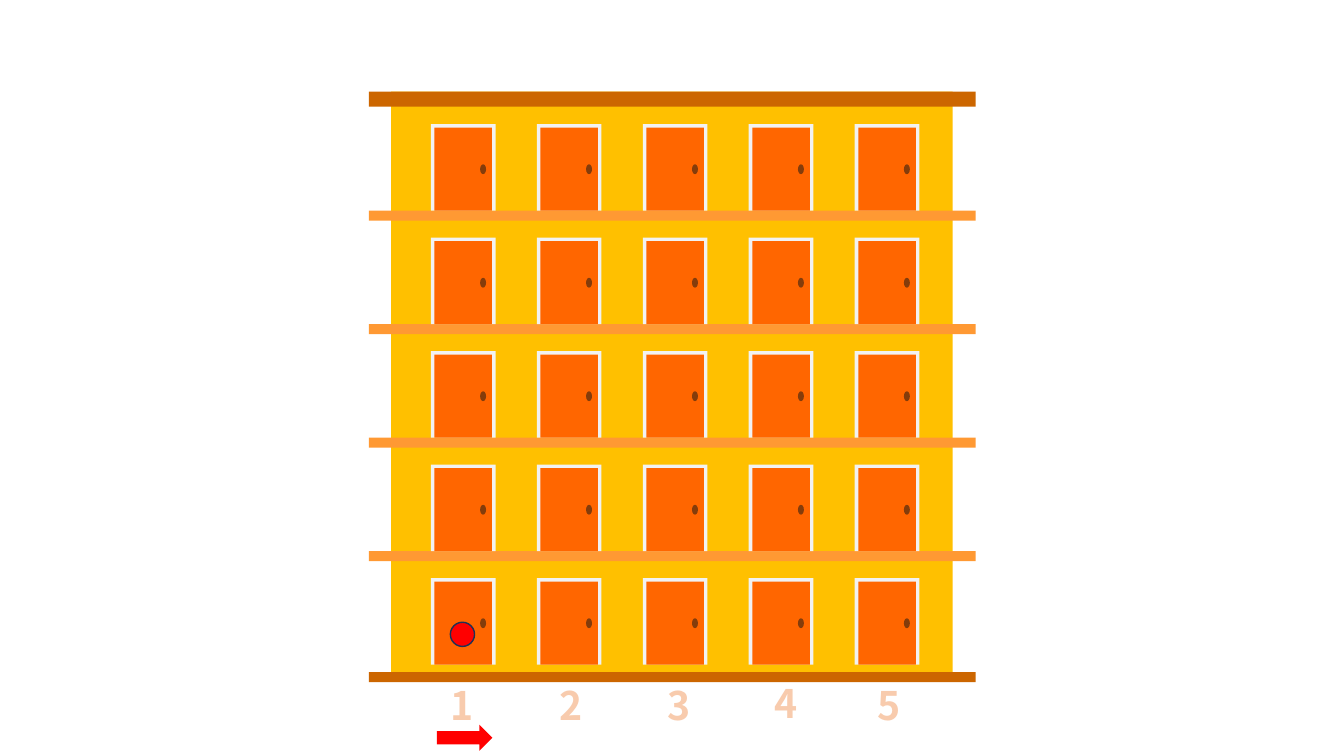
from lxml.etree import SubElement
from pptx import Presentation
from pptx.dml.color import RGBColor
from pptx.enum.shapes import MSO_SHAPE
from pptx.enum.text import MSO_AUTO_SIZE, PP_ALIGN
from pptx.oxml.ns import qn
from pptx.util import Cm, Pt

COLORS = {
    "wall": "FFC000",
    "roof": "CC6600",
    "ledge": "FF9933",
    "frame": "F2F2F2",
    "door": "FF6600",
    "knob": "843C0B",
    "marker": "FF0000",
    "marker_line": "1E3256",
    "number": "F8CBAD",
    "number_line": "ED7D31",
}
FONT = "Noto Sans CJK SC"
NUMBERS = [
    ("1", 11.1, 17.04),
    ("2", 13.84, 17.04),
    ("3", 16.56, 17.04),
    ("4", 19.28, 16.99),
    ("5", 21.87, 17.04),
]
FLOORS, DOORS_PER_FLOOR = 5, 5
DOOR_LEFT, DOOR_TOP = 10.86, 3.13
DOOR_PITCH, FLOOR_PITCH = 2.67, 2.86
LEDGE_LEFT, LEDGE_TOP, LEDGE_WIDTH, LEDGE_HEIGHT = 9.3, 5.31, 15.29, 0.25
WALL = (9.86, 2.31, 14.15, 14.63)
ROOF = (LEDGE_LEFT, 2.31, LEDGE_WIDTH, 0.38)
BASE = (LEDGE_LEFT, 16.94, LEDGE_WIDTH, LEDGE_HEIGHT)
DOOR_PARTS = [
    (MSO_SHAPE.RECTANGLE, (0, 0, 1.63, 2.18), "frame"),
    (MSO_SHAPE.RECTANGLE, (0.09, 0.09, 1.45, 2.09), "door"),
    (MSO_SHAPE.OVAL, (1.24, 1.01, 0.15, 0.25), "knob"),
]
ARROW = (11.01, 18.26, 1.4, 0.66)
BALL = (11.35, 15.68, 0.61, 0.61)


def add_filled(shapes, kind, box, color):
    shape = shapes.add_shape(kind, *map(Cm, box))
    shape.shadow.inherit = False
    shape.fill.solid()
    shape.fill.fore_color.rgb = RGBColor.from_string(COLORS[color])
    shape.line.fill.background()
    return shape


def add_door(slide, left, top):
    group = slide.shapes.add_group_shape()
    for kind, (dx, dy, width, height), color in DOOR_PARTS:
        add_filled(group.shapes, kind, (left + dx, top + dy, width, height), color)


def add_number(slide, text, left, top):
    box = slide.shapes.add_textbox(Cm(left), Cm(top), Cm(1.07), Cm(1.45))
    text_frame = box.text_frame
    text_frame.text = text
    text_frame.word_wrap = False
    text_frame.auto_size = MSO_AUTO_SIZE.SHAPE_TO_FIT_TEXT
    paragraph = text_frame.paragraphs[0]
    paragraph.alignment = PP_ALIGN.CENTER
    font = paragraph.runs[0].font
    font.name = FONT
    font.size = Pt(28)
    font.bold = True
    font.color.rgb = RGBColor.from_string(COLORS["number"])
    properties = paragraph.runs[0].font._element
    outline = SubElement(properties, qn("a:ln"), w=str(Pt(1.75)))
    fill = SubElement(outline, qn("a:solidFill"))
    SubElement(fill, qn("a:srgbClr"), val=COLORS["number_line"])
    properties.insert(0, outline)


def main():
    presentation = Presentation()
    presentation.slide_width = Cm(33.87)
    presentation.slide_height = Cm(19.05)
    slide = presentation.slides.add_slide(presentation.slide_layouts[6])

    add_filled(slide.shapes, MSO_SHAPE.RECTANGLE, WALL, "wall")
    add_filled(slide.shapes, MSO_SHAPE.RECTANGLE, ROOF, "roof")
    for floor in range(FLOORS - 1):
        ledge = (LEDGE_LEFT, LEDGE_TOP + floor * FLOOR_PITCH, LEDGE_WIDTH, LEDGE_HEIGHT)
        add_filled(slide.shapes, MSO_SHAPE.RECTANGLE, ledge, "ledge")
    add_filled(slide.shapes, MSO_SHAPE.RECTANGLE, BASE, "roof")

    for floor in range(FLOORS):
        for column in range(DOORS_PER_FLOOR):
            add_door(slide, DOOR_LEFT + column * DOOR_PITCH, DOOR_TOP + floor * FLOOR_PITCH)

    add_filled(slide.shapes, MSO_SHAPE.RIGHT_ARROW, ARROW, "marker")
    ball = add_filled(slide.shapes, MSO_SHAPE.OVAL, BALL, "marker")
    ball.line.color.rgb = RGBColor.from_string(COLORS["marker_line"])
    ball.line.width = Pt(1)

    for text, left, top in NUMBERS:
        add_number(slide, text, left, top)

    presentation.save("out.pptx")


if __name__ == "__main__":
    main()
